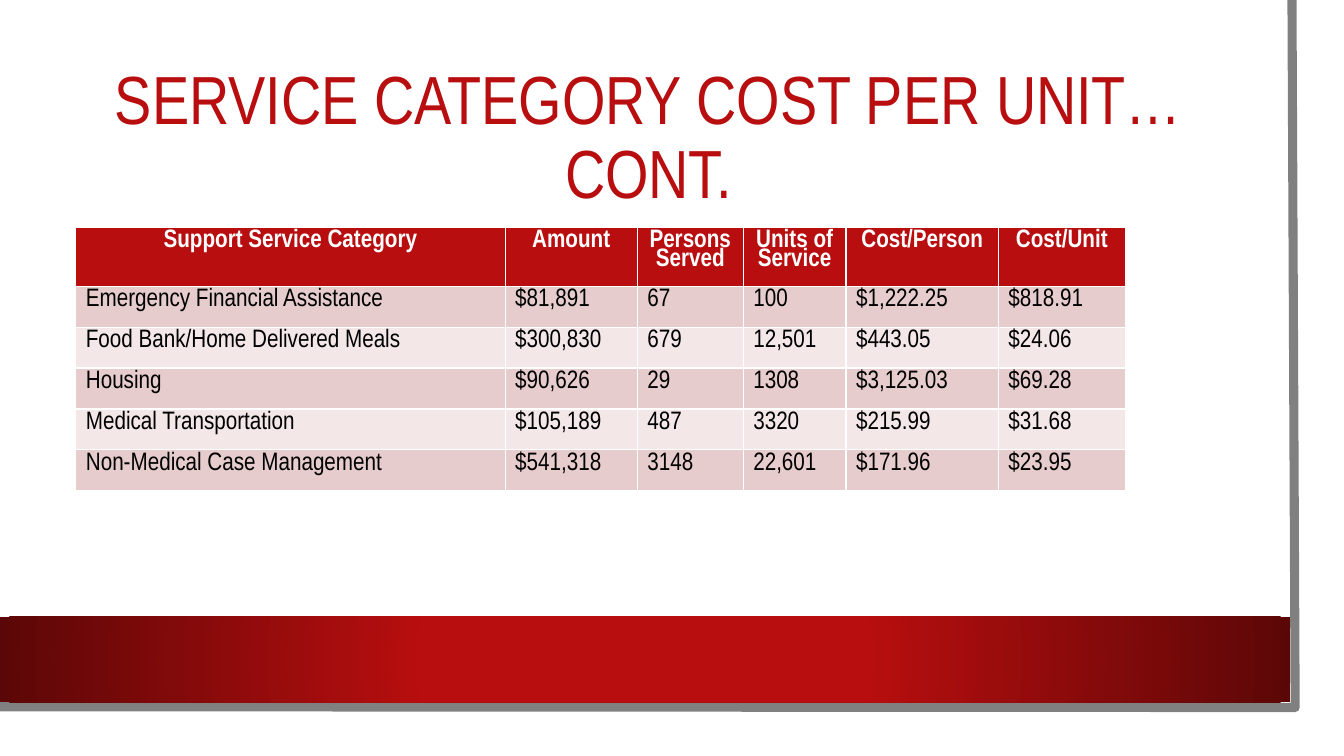
from lxml import etree
from pptx import Presentation
from pptx.dml.color import RGBColor
from pptx.enum.shapes import MSO_SHAPE
from pptx.enum.text import MSO_ANCHOR, PP_ALIGN
from pptx.oxml.ns import qn
from pptx.util import Cm, Pt

RECTANGLE = MSO_SHAPE.RECTANGLE
MIDDLE = MSO_ANCHOR.MIDDLE
LEFT, CENTER = PP_ALIGN.LEFT, PP_ALIGN.CENTER

FONT = "Arial Narrow"
RED, DARK_RED, WHITE, BLACK, GREY = "B80E0F", "5C0707", "FFFFFF", "000000", "808080"
BANDS = ("E6CCCC", "F3E7E7")

COLUMN_WIDTHS = (10.82, 3.33, 2.67, 2.59, 3.84, 3.2)
ROW_HEIGHT = 1.03
ROWS = (
    ("Support Service Category", "Amount", "Persons Served", "Units of Service", "Cost/Person", "Cost/Unit"),
    ("Emergency Financial Assistance", "$81,891", "67", "100", "$1,222.25", "$818.91"),
    ("Food Bank/Home Delivered Meals", "$300,830", "679", "12,501", "$443.05", "$24.06"),
    ("Housing", "$90,626", "29", "1308", "$3,125.03", "$69.28"),
    ("Medical Transportation", "$105,189", "487", "3320", "$215.99", "$31.68"),
    ("Non-Medical Case Management", "$541,318", "3148", "22,601", "$171.96", "$23.95"),
)


def color(value):
    return RGBColor.from_string(value)


def set_text(tf, text, size=18, fill=BLACK, bold=False, align=LEFT, spacing=0.8):
    p = tf.paragraphs[0]
    p.alignment = align
    p.line_spacing = spacing
    r = p.add_run()
    r.text = text
    r.font.name = FONT
    r.font.size = Pt(size)
    r.font.bold = bold
    r.font.color.rgb = color(fill)


def add_rectangle(s, left, top, width, height):
    sp = s.shapes.add_shape(RECTANGLE, Cm(left), Cm(top), Cm(width), Cm(height))
    sp.shadow.inherit = False
    sp.line.fill.background()
    return sp


def add_page(s):
    sp = add_rectangle(s, 0, 0, 33.27, 18.47)
    sp.fill.solid()
    sp.fill.fore_color.rgb = color(WHITE)


def add_page_edge(s):
    builder = s.shapes.build_freeform(Cm(32.56), Cm(0))
    builder.add_line_segments([(Cm(32.64), Cm(17.83)), (Cm(-0.08), Cm(17.81))], close=False)
    sp = builder.convert_to_shape()
    sp.shadow.inherit = False
    sp.fill.background()
    sp.line.color.rgb = color(GREY)
    sp.line.width = Pt(6.5)


def add_band(s):
    sp = add_rectangle(s, 0, 15.54, 32.51, 2.16)
    sp.fill.gradient()
    for stop, position, value in zip(sp.fill.gradient_stops, (0.34, 1), (RED, DARK_RED)):
        stop.position = position
        stop.color.rgb = color(value)
    linear = next(sp.element.iter(qn("a:lin")))
    gradient = linear.getparent()
    gradient.remove(linear)
    circle = etree.SubElement(gradient, qn("a:path"), {"path": "circle"})
    etree.SubElement(circle, qn("a:fillToRect"), dict.fromkeys("ltrb", "50000"))


def add_title(s, text):
    tf = s.shapes.add_textbox(Cm(1.91), Cm(1.91), Cm(28.88), Cm(3.2)).text_frame
    tf.word_wrap = True
    tf.vertical_anchor = MIDDLE
    set_text(tf, text, size=48.6, fill=RED, align=CENTER, spacing=0.9)


def add_cost_table(s):
    table = s.shapes.add_table(
        len(ROWS), len(COLUMN_WIDTHS), Cm(1.91), Cm(5.74),
        Cm(sum(COLUMN_WIDTHS)), Cm(ROW_HEIGHT * len(ROWS)),
    ).table
    for column, width in zip(table.columns, COLUMN_WIDTHS):
        column.width = Cm(width)
    for i, values in enumerate(ROWS):
        table.rows[i].height = Cm(ROW_HEIGHT)
        header = i == 0
        for cell, value in zip(table.rows[i].cells, values):
            cell.fill.solid()
            cell.fill.fore_color.rgb = color(RED if header else BANDS[(i - 1) % 2])
            set_text(cell.text_frame, value, bold=header,
                     fill=WHITE if header else BLACK, align=CENTER if header else LEFT)


def main():
    prs = Presentation()
    prs.slide_width, prs.slide_height = Cm(33.87), Cm(19.05)
    s = prs.slides.add_slide(prs.slide_layouts[6])
    add_page(s)
    add_page_edge(s)
    add_band(s)
    add_title(s, "SERVICE CATEGORY COST PER UNIT…CONT.")
    add_cost_table(s)
    prs.save("out.pptx")


if __name__ == "__main__":
    main()
